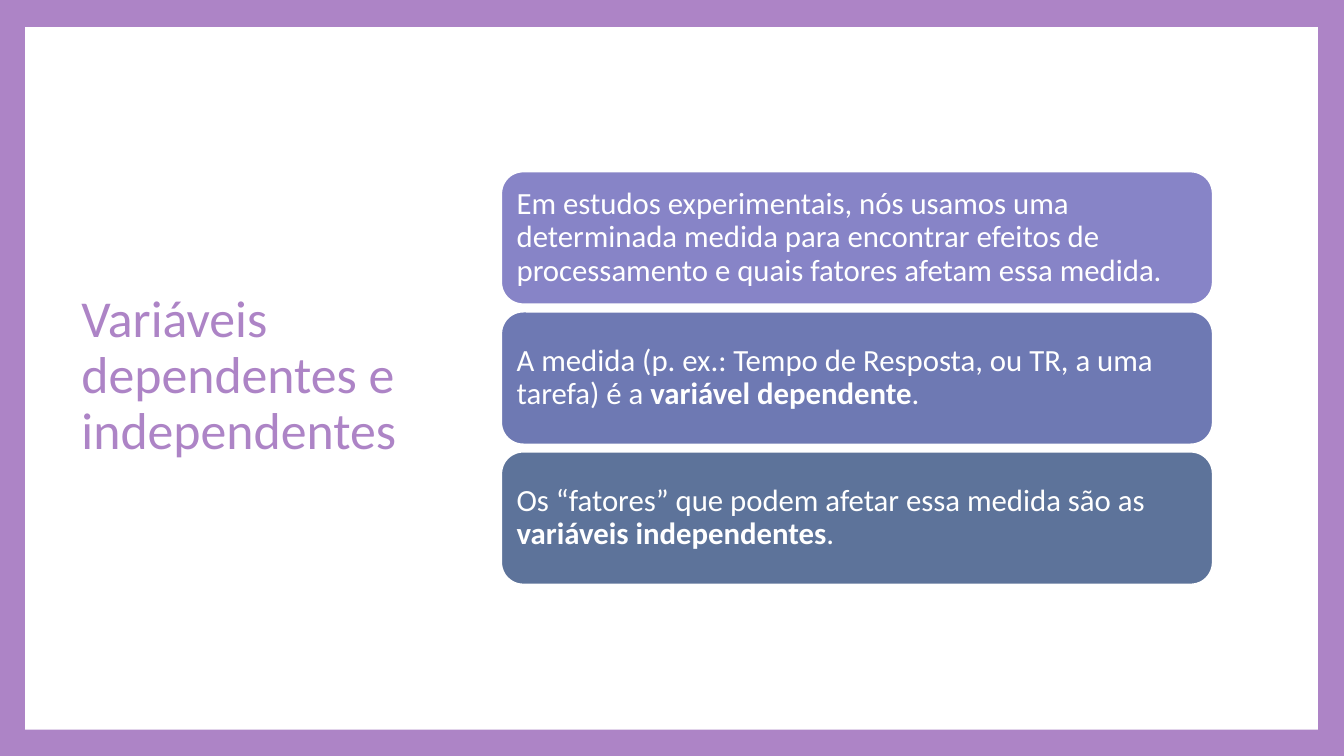
from pptx import Presentation
from pptx.dml.color import RGBColor
from pptx.enum.shapes import MSO_SHAPE
from pptx.enum.text import MSO_ANCHOR, PP_ALIGN
from pptx.util import Pt

RECT = MSO_SHAPE.RECTANGLE
ROUND = MSO_SHAPE.ROUNDED_RECTANGLE
MIDDLE = MSO_ANCHOR.MIDDLE
LEFT = PP_ALIGN.LEFT
PX = 9144  # 100 px to the inch
PURPLE, WHITE = "AD84C6", "FFFFFF"
TITLE = "Variáveis dependentes e independentes"
CARDS = [
    ("8784C7", [("Em estudos experimentais, nós usamos uma determinada medida "
                 "para encontrar efeitos de processamento e quais fatores "
                 "afetam essa medida.", False)]),
    ("6E79B3", [("A medida (p. ex.: Tempo de Resposta, ou TR, a uma tarefa) é a ", False),
                ("variável dependente", True), (".", False)]),
    ("5D739A", [("Os “fatores” que podem afetar essa medida são as ", False),
                ("variáveis independentes", True), (".", False)]),
]
CARD_X, CARD_Y, CARD_W, CARD_H, STEP = 497, 170, 706, 132, 139


def paint(fill, color):
    fill.solid()
    fill.fore_color.rgb = RGBColor.from_string(color)


def add_box(slide, kind, box, color):
    shape = slide.shapes.add_shape(kind, *(n * PX for n in box))
    shape.shadow.inherit = False
    paint(shape.fill, color)
    shape.line.fill.background()
    return shape


def write(frame, runs, size, color):
    """Fill a frame with one left-aligned paragraph of (text, bold) runs."""
    frame.word_wrap = True
    frame.vertical_anchor = MIDDLE
    para = frame.paragraphs[0]
    para.alignment = LEFT
    para.line_spacing = 0.9
    para.font.name = "Calibri"
    para.font.size = Pt(size)
    para.font.color.rgb = RGBColor.from_string(color)
    for text, bold in runs:
        run = para.add_run()
        run.text = text
        if bold:
            run.font.bold = True


def add_title(slide):
    box = slide.shapes.add_textbox(*(n * PX for n in (71, 67, 368, 613)))
    write(box.text_frame, [(TITLE, False)], 37, PURPLE)


def add_card(slide, top, color, runs):
    card = add_box(slide, ROUND, (CARD_X, top, CARD_W, CARD_H), color)
    paint(card.line.fill, WHITE)
    card.line.width = Pt(1.5)
    frame = card.text_frame
    frame.margin_left = frame.margin_right = 9 * PX
    frame.margin_top = frame.margin_bottom = 9 * PX
    write(frame, runs, 22, WHITE)


def main():
    prs = Presentation()
    prs.slide_width, prs.slide_height = 1333 * PX, 750 * PX
    slide = prs.slides.add_slide(prs.slide_layouts[6])
    paint(slide.background.fill, PURPLE)
    add_box(slide, RECT, (25, 27, 1282, 697), WHITE)
    add_title(slide)
    for i, (color, runs) in enumerate(CARDS):
        add_card(slide, CARD_Y + i * STEP, color, runs)
    prs.save("out.pptx")


if __name__ == "__main__":
    main()
